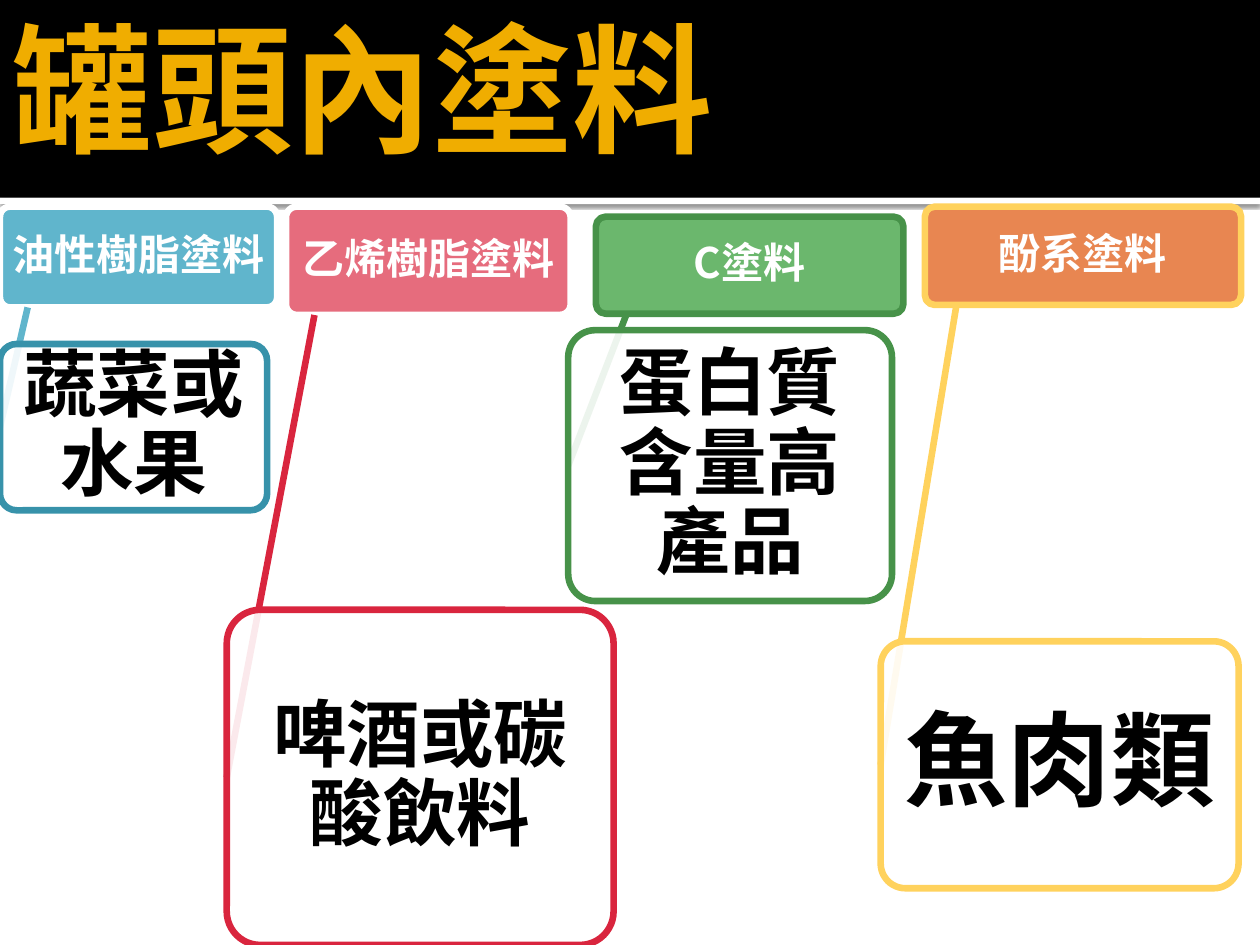
"""Build the slide on four interior can coatings and the foods they suit."""
from lxml.etree import SubElement
from pptx import Presentation
from pptx.dml.color import RGBColor
from pptx.enum.shapes import MSO_CONNECTOR as CONNECTOR, MSO_SHAPE as SHAPE
from pptx.enum.text import MSO_ANCHOR as ANCHOR, MSO_AUTO_SIZE as AUTO_SIZE, PP_ALIGN as ALIGN
from pptx.oxml.ns import qn
from pptx.util import Inches, Pt

FONT = "Noto Sans CJK SC"
BLACK = RGBColor(0x00, 0x00, 0x00)
WHITE = RGBColor(0xFF, 0xFF, 0xFF)
GOLD = RGBColor(0xF0, 0xAD, 0x00)
SKY = RGBColor(0x60, 0xB5, 0xCC)
TEAL = RGBColor(0x37, 0x92, 0xAA)
PINK = RGBColor(0xE6, 0x6C, 0x7D)
RED = RGBColor(0xD9, 0x25, 0x3E)
LIGHT_GREEN = RGBColor(0x6B, 0xB7, 0x6D)
GREEN = RGBColor(0x47, 0x92, 0x49)
ORANGE = RGBColor(0xE8, 0x86, 0x51)
YELLOW = RGBColor(0xFF, 0xD2, 0x5D)

TITLE = "罐頭內塗料"
BAND_HEIGHT = 1.57
LINE_WIDTH = Pt(3.78)
HEADER_SIZE = 24
HEADER_INSETS = (0.05, 0.03)
COATINGS = [
    {"name": "油性樹脂塗料", "header": (0, 1.64, 2.2, 0.8), "fill": SKY, "edge": WHITE, "link": SKY,
     "food": "蔬菜或水果", "body": (0, 2.73, 2.12, 1.32), "outline": TEAL, "size": 42},
    {"name": "乙烯樹脂塗料", "header": (2.27, 1.64, 2.26, 0.86), "fill": PINK, "edge": WHITE, "link": RED,
     "food": "啤酒或碳酸飲料", "body": (1.8, 4.84, 3.07, 2.66), "outline": RED, "size": 42},
    {"name": "C塗料", "header": (4.73, 1.72, 2.44, 0.77), "fill": LIGHT_GREEN, "edge": GREEN, "link": GREEN,
     "food": "蛋白質含量高產品", "body": (4.51, 2.62, 2.57, 2.15), "outline": GREEN, "size": 42},
    {"name": "酚系塗料", "header": (7.34, 1.64, 2.51, 0.78), "fill": ORANGE, "edge": YELLOW, "link": YELLOW,
     "food": "魚肉類", "body": (6.99, 5.09, 2.84, 1.96), "outline": YELLOW, "size": 59},
]


def write_text(shape, text, size, color, align, insets):
    text_frame = shape.text_frame
    text_frame.text = text
    text_frame.word_wrap = True
    text_frame.auto_size = AUTO_SIZE.NONE
    text_frame.vertical_anchor = ANCHOR.MIDDLE
    (text_frame.margin_left, text_frame.margin_top,
     text_frame.margin_right, text_frame.margin_bottom) = map(Inches, insets)
    paragraph = text_frame.paragraphs[0]
    paragraph.alignment = align
    run = paragraph.runs[0]
    run.font.size = Pt(size)
    run.font.bold = True
    run.font.color.rgb = color
    run.font.name = FONT
    SubElement(run._r.get_or_add_rPr(), qn("a:ea"), typeface=FONT)
    return paragraph


def add_band(slide, top, height, color):
    band = slide.shapes.add_shape(SHAPE.RECTANGLE, 0, Inches(top), Inches(10), Inches(height))
    band.shadow.inherit = False
    band.fill.solid()
    band.fill.fore_color.rgb = color
    band.line.fill.background()
    return band


def add_rule_shadow(rule):
    effects = rule._element.spPr.find(qn("a:effectLst"))
    shadow = SubElement(effects, qn("a:outerShdw"), blurRad=str(Pt(2.5)), dist=str(Pt(0.8)),
                        dir="5400000", algn="tl", rotWithShape="0")
    color = SubElement(shadow, qn("a:srgbClr"), val=str(BLACK))
    SubElement(color, qn("a:alpha"), val="60000")


def add_card(slide, box, fill, outline, text, size, color, insets):
    card = slide.shapes.add_shape(SHAPE.ROUNDED_RECTANGLE, *map(Inches, box))
    card.adjustments[0] = 0.1
    card.shadow.inherit = False
    card.fill.solid()
    card.fill.fore_color.rgb = fill
    card.line.color.rgb = outline
    card.line.width = LINE_WIDTH
    write_text(card, text, size, color, ALIGN.CENTER, insets * 2).line_spacing = 0.9
    return card


def add_link(slide, header, body, color):
    left, top, width, height = header
    body_left, body_top, _, body_height = body
    ends = (left + width / 10, top + height, body_left, body_top + body_height / 2)
    link = slide.shapes.add_connector(CONNECTOR.STRAIGHT, *map(Inches, ends))
    link.line.color.rgb = color
    link.line.width = LINE_WIDTH
    SubElement(link._element.spPr, qn("a:effectLst"))


def add_coating(slide, coating):
    add_card(slide, coating["header"], coating["fill"], coating["edge"],
             coating["name"], HEADER_SIZE, WHITE, HEADER_INSETS)
    add_link(slide, coating["header"], coating["body"], coating["link"])
    size = coating["size"]
    body = add_card(slide, coating["body"], WHITE, coating["outline"], coating["food"],
                    size, BLACK, (round(size / 480, 2), round(size / 720, 2)))
    color = body._element.spPr.find(qn("a:solidFill"))[0]
    SubElement(color, qn("a:alpha"), val="90000")


def main():
    presentation = Presentation()
    presentation.slide_width, presentation.slide_height = Inches(10), Inches(7.5)
    slide = presentation.slides.add_slide(presentation.slide_layouts[5])
    add_rule_shadow(add_band(slide, BAND_HEIGHT, 0.05, WHITE))
    add_band(slide, 0, BAND_HEIGHT, BLACK)
    title = slide.shapes.title
    title.left, title.top, title.width, title.height = map(Inches, (0, 0, 9, 1.37))
    write_text(title, TITLE, 80, GOLD, ALIGN.LEFT, (0.1, 0.05, 0.05, 0.05))
    slide.shapes._spTree.append(title._element)
    for coating in COATINGS:
        add_coating(slide, coating)
    presentation.save("out.pptx")


if __name__ == "__main__":
    main()
